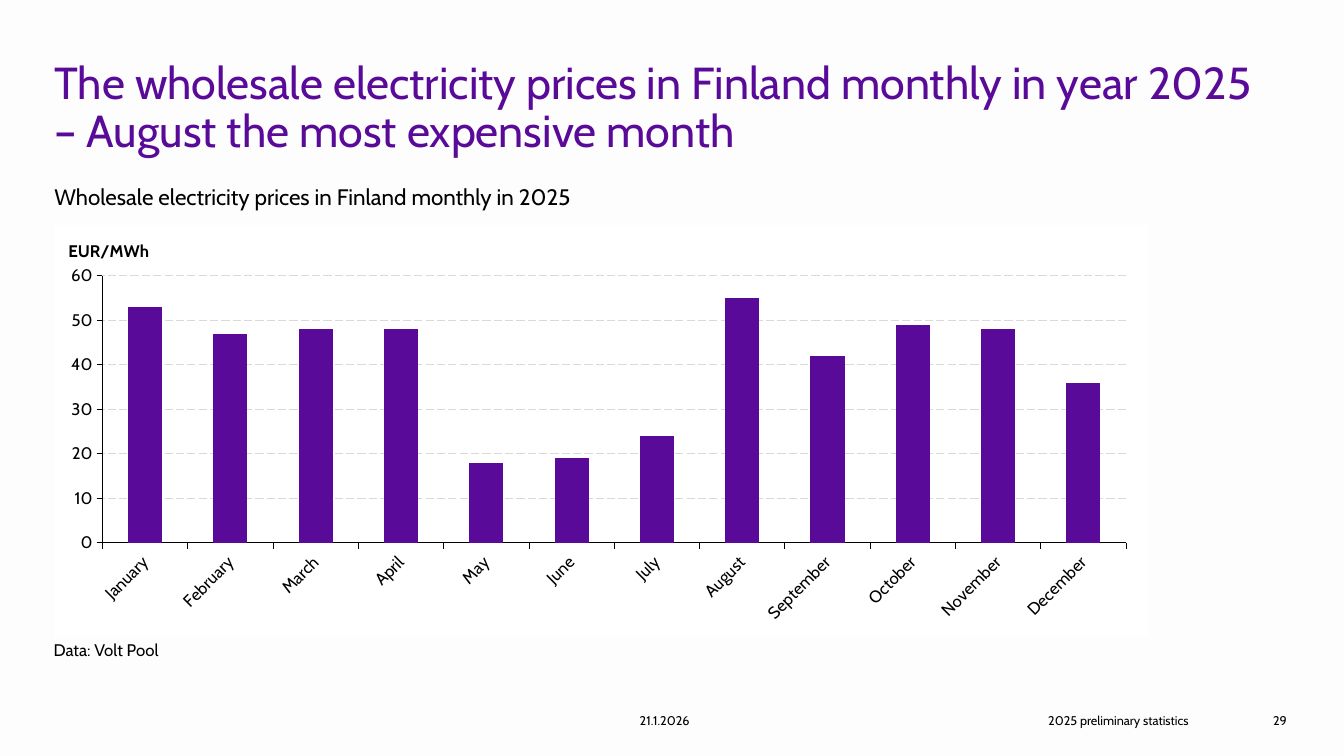
from lxml.etree import fromstring
from pptx import Presentation
from pptx.chart.data import CategoryChartData
from pptx.dml.color import RGBColor
from pptx.enum.chart import XL_CHART_TYPE, XL_TICK_MARK
from pptx.enum.dml import MSO_LINE
from pptx.enum.text import MSO_ANCHOR, PP_ALIGN
from pptx.oxml.ns import nsdecls, qn
from pptx.util import Cm, Pt

THEME = {
    "font": "Cabin", "back": "FEFDFD", "panel": "FFFFFF", "ink": "000000",
    "main": "590A99", "grid": "D9D9D9",
    "title": 32, "sub": 16, "label": 12, "foot": 9,
}
PRICES = {
    "January": 53, "February": 47, "March": 48, "April": 48,
    "May": 18, "June": 19, "July": 24, "August": 55,
    "September": 42, "October": 49, "November": 48, "December": 36,
}
UNIT = "EUR/MWh"
LEFT, FOOT = 1.37, 17.65
L, C, R = PP_ALIGN.LEFT, PP_ALIGN.CENTER, PP_ALIGN.RIGHT
BODY = [
    ("The wholesale electricity prices in Finland monthly in year 2025 "
     "– August the most expensive month",
     (LEFT, 1.4, 31.06, 2.77), "title", "main"),
    ("Wholesale electricity prices in Finland monthly in 2025",
     (LEFT, 4.57, 31.09, 0.76), "sub", "ink"),
    ("Data: Volt Pool", (1.35, 16.05, 31.09, 0.58), "label", "ink"),
]
FOOTER = [
    ("21.1.2026", 15.34, 2.82, C, 0),
    ("2025 preliminary statistics", 18.77, 11.18, R, 0.25),
    ("29", 30.53, 1.9, R, 0.25),
]
CHART = (LEFT, 5.66, 27.56, 10.39)
PLOT = {"x": 0.044, "y": 0.124, "w": 0.936, "h": 0.648}
UNIT_AT = {"x": 0.01, "y": 0.03}


def tint(name):
    return RGBColor.from_string(THEME[name])


def style(font, size, color="ink", bold=False):
    font.name = THEME["font"]
    font.size = Pt(THEME[size])
    font.color.rgb = tint(color)
    font.bold = bold


def add_text(slide, text, box, size, color, align=L, pads=(0, 0.25), foot=False):
    frame = slide.shapes.add_textbox(*map(Cm, box)).text_frame
    frame.word_wrap = True
    frame.margin_left, frame.margin_right = map(Cm, pads)
    frame.margin_top = frame.margin_bottom = Cm(0.13)
    frame.vertical_anchor = MSO_ANCHOR.MIDDLE if foot else MSO_ANCHOR.TOP
    para = frame.paragraphs[0]
    para.alignment = align
    para.line_spacing = 1.0 if foot else 0.9
    run = para.add_run()
    run.text = text
    style(run.font, size, color)


def set_layout(node, spot, index, inner=False):
    for old in node.findall(qn("c:layout")):
        node.remove(old)
    target = '<c:layoutTarget val="inner"/>' if inner else ""
    modes = "".join(f'<c:{k}Mode val="edge"/>' for k in "xy")
    sizes = "".join(f'<c:{k} val="{v}"/>' for k, v in spot.items())
    node.insert(index, fromstring(
        f'<c:layout {nsdecls("c")}><c:manualLayout>{target}{modes}{sizes}'
        '</c:manualLayout></c:layout>'))


def add_chart(slide):
    data = CategoryChartData()
    data.categories = list(PRICES)
    data.add_series("Series 1", list(PRICES.values()))
    chart = slide.shapes.add_chart(
        XL_CHART_TYPE.COLUMN_CLUSTERED, *map(Cm, CHART), data).chart
    chart.has_legend = chart.has_title = False
    style(chart.font, "label")
    space = chart.element
    space.find(qn("c:txPr")).addprevious(fromstring(
        f'<c:spPr {nsdecls("c", "a")}><a:solidFill><a:srgbClr '
        f'val="{THEME["panel"]}"/></a:solidFill><a:ln><a:noFill/></a:ln></c:spPr>'))
    set_layout(next(space.iter(qn("c:plotArea"))), PLOT, 0, True)

    plot = chart.plots[0]
    plot.gap_width = 150
    plot.vary_by_categories = False
    fill = plot.series[0].format.fill
    fill.solid()
    fill.fore_color.rgb = tint("main")

    months, price = chart.category_axis, chart.value_axis
    for axis in (months, price):
        axis.major_tick_mark = XL_TICK_MARK.OUTSIDE
        axis.minor_tick_mark = XL_TICK_MARK.NONE
        axis.format.line.color.rgb = tint("ink")
        axis.format.line.width = Pt(0.5)
        style(axis.tick_labels.font, "label")
    turn = next(months.tick_labels.font._element.iterancestors(qn("c:txPr")))
    turn.find(qn("a:bodyPr")).set("rot", "-2700000")

    price.minimum_scale, price.maximum_scale, price.major_unit = 0, 60, 10
    price.tick_labels.number_format = "0"
    price.tick_labels.number_format_is_linked = False
    price.has_major_gridlines = True
    grid = price.major_gridlines.format.line
    grid.color.rgb = tint("grid")
    grid.width = Pt(0.75)
    grid.dash_style = MSO_LINE.LONG_DASH

    title = price.axis_title
    run = title.text_frame.paragraphs[0].add_run()
    run.text = UNIT
    style(run.font, "label", bold=True)
    body = next(title._element.iter(qn("a:bodyPr")))
    body.set("rot", "0")
    body.set("vert", "horz")
    set_layout(title._element, UNIT_AT, 1)


def main():
    deck = Presentation()
    deck.slide_width, deck.slide_height = Cm(33.87), Cm(19.05)
    slide = deck.slides.add_slide(deck.slide_layouts[6])
    back = slide.background.fill
    back.solid()
    back.fore_color.rgb = tint("back")
    for item in BODY:
        add_text(slide, *item)
    for text, left, width, align, pad in FOOTER:
        add_text(slide, text, (left, FOOT, width, 1.02), "foot", "ink",
                 align, (pad, 0), True)
    add_chart(slide)
    deck.save("out.pptx")


if __name__ == "__main__":
    main()
